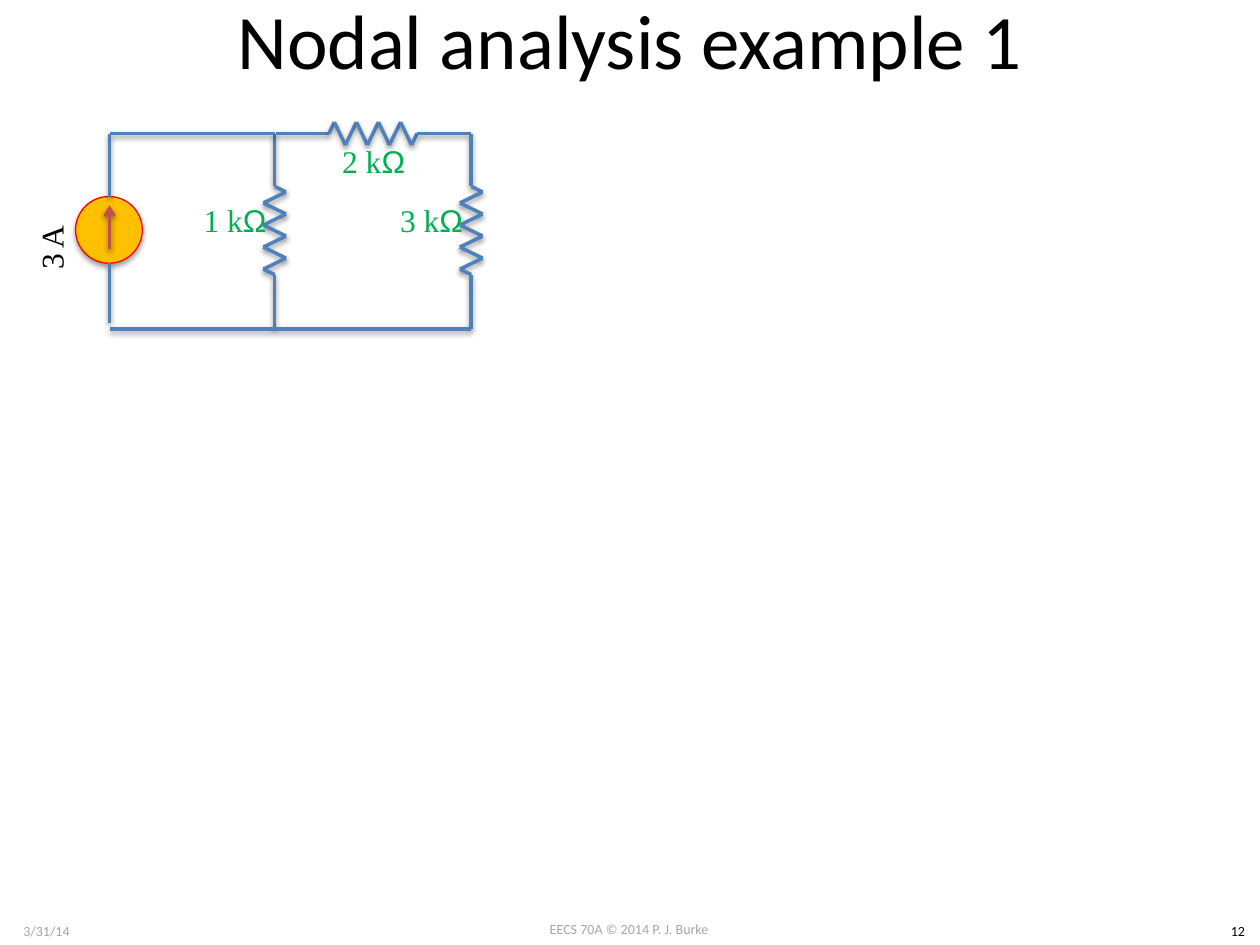
from copy import deepcopy
from dataclasses import dataclass

from lxml import etree
from pptx import Presentation
from pptx.dml.color import RGBColor
from pptx.enum.shapes import MSO_CONNECTOR, MSO_SHAPE
from pptx.enum.text import MSO_ANCHOR, PP_ALIGN
from pptx.oxml import parse_xml
from pptx.util import Inches, Pt

STRAIGHT = MSO_CONNECTOR.STRAIGHT
ELLIPSE = MSO_SHAPE.OVAL
CENTER = PP_ALIGN.CENTER
TOP, MIDDLE = MSO_ANCHOR.TOP, MSO_ANCHOR.MIDDLE
DRAWING = "http://schemas.openxmlformats.org/drawingml/2006/main"


@dataclass(frozen=True)
class Theme:
    black: RGBColor = RGBColor(0, 0, 0)
    footer: RGBColor = RGBColor(0xA6, 0xA6, 0xA6)
    wire: RGBColor = RGBColor(0x4F, 0x81, 0xBD)
    value: RGBColor = RGBColor(0x00, 0xB0, 0x50)
    source: RGBColor = RGBColor(0xFF, 0xC0, 0x00)
    source_edge: RGBColor = RGBColor(0xFF, 0x00, 0x00)
    current: RGBColor = RGBColor(0xC0, 0x50, 0x4D)
    title_size: int = 44
    value_size: int = 18
    footer_size: int = 8
    body_font: str = "Calibri"
    value_font: str = "Times New Roman"
    symbol_font: str = "Arial"


theme = Theme()
shadow_effects = parse_xml(
    f'<a:effectLst xmlns:a="{DRAWING}">'
    '<a:outerShdw blurRad="40000" dist="20000" dir="5400000" rotWithShape="0">'
    '<a:srgbClr val="000000"><a:alpha val="38000"/></a:srgbClr>'
    '</a:outerShdw></a:effectLst>'
)

prs = Presentation()
prs.slide_width, prs.slide_height = Inches(10), Inches(7.5)
slide = prs.slides.add_slide(prs.slide_layouts[6])


def write_text(text, *, box, size, color, font=theme.body_font, symbol="",
               anchor=MIDDLE, rotation=0):
    label = slide.shapes.add_textbox(*map(Inches, box))
    label.rotation = rotation
    frame = label.text_frame
    frame.word_wrap = True
    frame.vertical_anchor = anchor
    paragraph = frame.paragraphs[0]
    paragraph.alignment = CENTER
    for content, typeface in ((text, font), (symbol, theme.symbol_font)):
        if content:
            run = paragraph.add_run()
            run.text = content
            run.font.name = typeface
            run.font.size = Pt(size)
            run.font.color.rgb = color


def draw_wire(parent, start, end, color=theme.wire):
    wire = parent.shapes.add_connector(STRAIGHT, *map(Inches, (*start, *end)))
    wire.line.color.rgb = color
    wire.line.width = Pt(2)
    wire.element.spPr.append(deepcopy(shadow_effects))
    return wire


for text, box, color in (
    ("EECS 70A © 2014 P. J. Burke", (3.83, 7.26, 2.33, 0.24), theme.footer),
    ("3/31/14", (0, 7.27, 0.74, 0.24), theme.footer),
    ("12", (9.65, 7.27, 0.35, 0.24), theme.black),
):
    write_text(text, box=box, size=theme.footer_size, color=color, anchor=TOP)

write_text("Nodal analysis example 1", box=(0.5, -0.17, 9, 0.95),
           size=theme.title_size, color=theme.black)

left, middle, right = 0.87, 2.18, 3.74
top, bottom = 1.06, 2.61
amplitude, peaks = 0.09, 8
zigzag_start, zigzag_end = 0.42, 1.12
pitch = (zigzag_end - zigzag_start) / peaks
resistor_path = (
    [(0, 0), (0.33, 0), (zigzag_start, 0)]
    + [(zigzag_start + (i + 0.5) * pitch, amplitude * (-1) ** i) for i in range(peaks)]
    + [(zigzag_end, 0), (1.21, 0), (1.55, 0)]
)

for x, vertical in ((middle, True), (middle + 0.01, False), (right, True)):
    resistor = slide.shapes.add_group_shape()
    points = [(x + side, top + along) if vertical else (x + along, top - side)
              for along, side in resistor_path]
    for start, end in zip(points, points[1:]):
        draw_wire(resistor, start, end)

draw_wire(slide, (middle, top), (left, top))
draw_wire(slide, (right, bottom), (left, bottom))

for text, x, y in (("1 k", 1.27, 1.38), ("3 k", 2.83, 1.38), ("2 k", 2.37, 0.91)):
    write_text(text, symbol="Ω", box=(x, y, 1.19, 0.73), size=theme.value_size,
               color=theme.value, font=theme.value_font)
write_text("3 A", box=(-0.19, 1.6, 1.19, 0.73), size=theme.value_size,
           color=theme.black, font=theme.value_font, rotation=270)

current_source = slide.shapes.add_group_shape()
source_circle = current_source.shapes.add_shape(
    ELLIPSE, *map(Inches, (0.6, 1.56, 0.53, 0.53)))
source_circle.fill.solid()
source_circle.fill.fore_color.rgb = theme.source
source_circle.line.color.rgb = theme.source_edge
source_circle.line.width = Pt(0.75)
source_circle.element.spPr.append(deepcopy(shadow_effects))

current_arrow = draw_wire(current_source, (left, 1.98), (left, 1.63), theme.current)
etree.SubElement(current_arrow.line._get_or_add_ln(), f"{{{DRAWING}}}tailEnd", type="arrow")
draw_wire(current_source, (left, 1.56), (left, top))
draw_wire(current_source, (left, 2.09), (left, 2.56))

prs.save("out.pptx")
